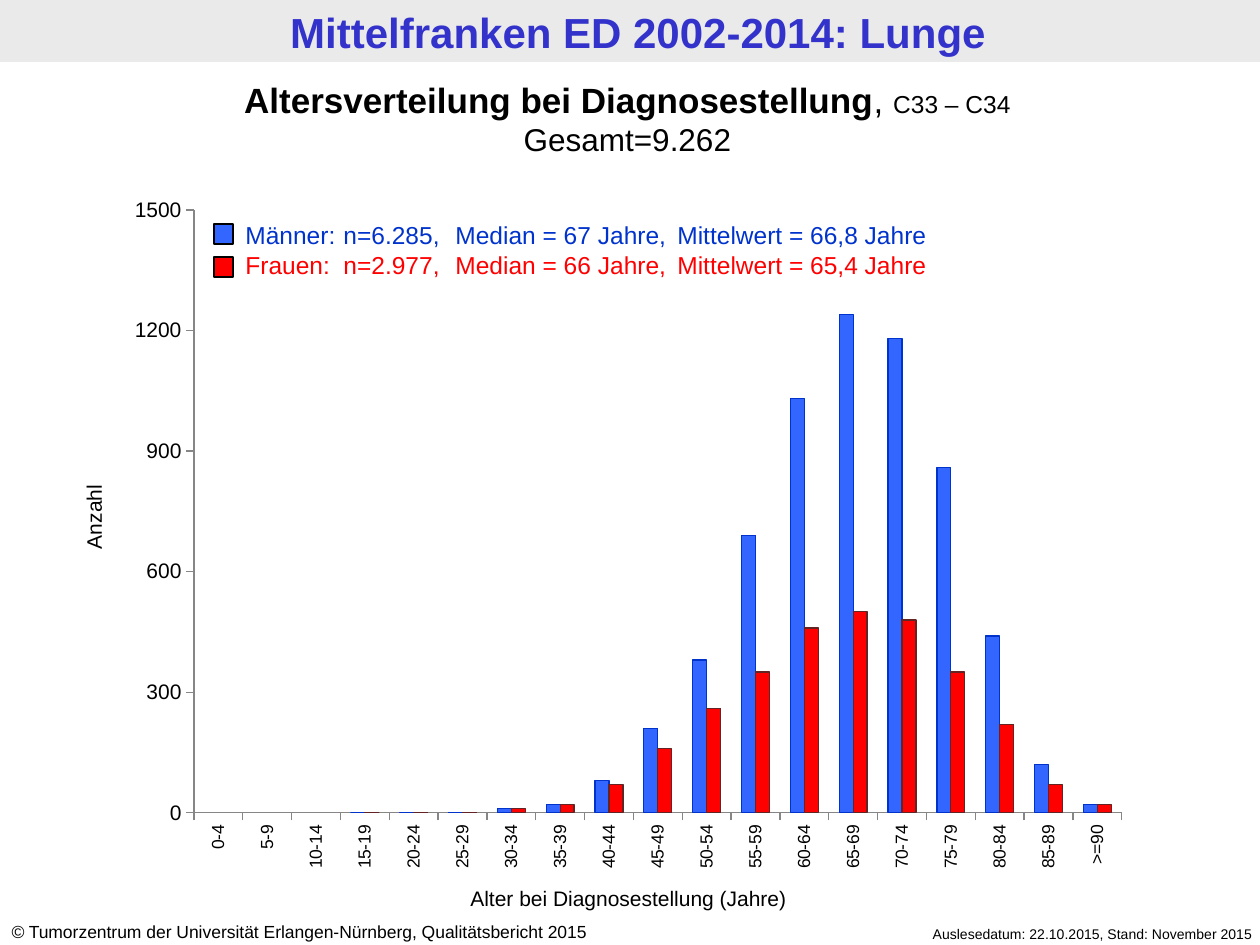
import pptx
import pptx.chart.data
import pptx.dml.color
import pptx.enum.chart
import pptx.enum.shapes
import pptx.enum.text
import pptx.oxml
import pptx.oxml.ns
import pptx.util

PX = 914400 // 126
FONT = "Arial"
BLACK, BLUE, DARK_BLUE, RED = "000000", "3366FF", "0033CC", "FF0000"
ALIGN = pptx.enum.text.PP_ALIGN
ANCHOR = pptx.enum.text.MSO_ANCHOR

TITLE = "Mittelfranken ED 2002-2014: Lunge"
HEADING = [("Altersverteilung bei Diagnosestellung", 20, True), (", ", 20, False),
           ("C33 – C34", 14, False)]
TOTAL = "Gesamt=9.262"
COPYRIGHT = [("©", True),
             (" Tumorzentrum der Universität Erlangen-Nürnberg, Qualitätsbericht 2015", False)]
STATUS = "Auslesedatum: 22.10.2015, Stand: November 2015"
AGE_LABEL, COUNT_LABEL = "Alter bei Diagnosestellung (Jahre)", "Anzahl"
LEGEND = [
    ("Männer: \tn=6.285, \tMedian = 67 Jahre, \tMittelwert = 66,8 Jahre", DARK_BLUE, BLUE),
    ("Frauen: \tn=2.977, \tMedian = 66 Jahre,\tMittelwert = 65,4 Jahre", RED, RED),
]
LEGEND_TABS = [98, 111, 210, 432]
AGES = [f"{age}-{age + 4}" for age in range(0, 90, 5)] + [">=90"]
COUNTS = [
    ("Männer", BLUE, DARK_BLUE,
     [None, None, None, 0, 0, 0, 10, 20, 80, 210, 380, 690, 1030, 1240, 1180, 860, 440, 120, 20]),
    ("Frauen", RED, "632523",
     [None, None, None, 0, 0, 0, 10, 20, 70, 160, 260, 350, 460, 500, 480, 350, 220, 70, 20]),
]
CHART_BOX = (115, 185, 1028, 699)
PLOT_BOX = (194, 210, 928, 603)


def emu(*lengths):
    return [pptx.util.Emu(length * PX) for length in lengths]


def rgb(color):
    return pptx.dml.color.RGBColor.from_string(color)


def set_font(font, size, color=BLACK, bold=False, italic=False):
    font.name, font.size = FONT, pptx.util.Pt(size)
    font.bold, font.italic = bold, italic
    font.color.rgb = rgb(color)


def add_box(slide, box, anchor=ANCHOR.TOP):
    label = slide.shapes.add_textbox(*emu(*box))
    frame = label.text_frame
    frame.word_wrap = True
    frame.vertical_anchor = anchor
    return label


def add_label(slide, box, text, size, align, anchor=ANCHOR.TOP):
    label = add_box(slide, box, anchor)
    paragraph = label.text_frame.paragraphs[0]
    paragraph.text, paragraph.alignment = text, align
    set_font(paragraph.font, size)
    return label


def add_rectangle(slide, box, fill, line=None):
    rectangle = slide.shapes.add_shape(pptx.enum.shapes.MSO_SHAPE.RECTANGLE, *emu(*box))
    rectangle.shadow.inherit = False
    rectangle.fill.solid()
    rectangle.fill.fore_color.rgb = rgb(fill)
    if line:
        rectangle.line.color.rgb = rgb(line)
        rectangle.line.width = pptx.util.Pt(0.75)
    else:
        rectangle.line.fill.background()
    return rectangle


def add_title(slide):
    band = add_rectangle(slide, (0, 0, 1260, 62), "EAEAEA")
    title = slide.shapes.title
    title._element.addprevious(band._element)
    title.left, title.top, title.width, title.height = emu(8, 1, 1260, 62)
    title.text = TITLE
    title.text_frame.vertical_anchor = ANCHOR.BOTTOM
    paragraph = title.text_frame.paragraphs[0]
    paragraph.alignment = ALIGN.CENTER
    set_font(paragraph.font, 24, "3333CC", bold=True)


def add_heading(slide):
    frame = add_box(slide, (-5, 72, 1265, 93)).text_frame
    heading, total = frame.paragraphs[0], frame.add_paragraph()
    for text, size, bold in HEADING:
        run = heading.add_run()
        run.text = text
        set_font(run.font, size, bold=bold)
    total.text = TOTAL
    set_font(total.font, 18)
    heading.alignment = total.alignment = ALIGN.CENTER


def add_tabs(paragraph, positions):
    properties = paragraph._p.get_or_add_pPr()
    tabs = pptx.oxml.parse_xml(f"<a:tabLst {pptx.oxml.ns.nsdecls('a')}/>")
    for position in positions:
        tab = tabs.makeelement(pptx.oxml.ns.qn("a:tab"), {"pos": str(position * PX), "algn": "l"})
        tabs.append(tab)
    properties.append(tabs)


def add_legend(slide):
    frame = add_box(slide, (233, 214, 863, 72)).text_frame
    for row, (text, color, fill) in enumerate(LEGEND):
        paragraph = frame.add_paragraph() if row else frame.paragraphs[0]
        paragraph.text = text
        add_tabs(paragraph, LEGEND_TABS)
        set_font(paragraph.font, 14, color)
        add_rectangle(slide, (214, 224 + 33 * row, 19, 20), fill, BLACK)


def fix_plot_area(chart):
    """Pin the inside of the axes to PLOT_BOX and give it a white fill."""
    left, top, width, height = CHART_BOX
    x, y, w, h = PLOT_BOX
    parts = {"x": (x - left) / width, "y": (y - top) / height, "w": w / width, "h": h / height}
    modes = "".join(f'<c:{part}Mode val="edge"/>' for part in "xy")
    values = "".join(f'<c:{part} val="{value:.4f}"/>' for part, value in parts.items())
    layout = pptx.oxml.parse_xml(
        f'<c:layout {pptx.oxml.ns.nsdecls("c")}><c:manualLayout>'
        f'<c:layoutTarget val="inner"/>{modes}{values}</c:manualLayout></c:layout>')
    plot_area = chart._chartSpace.chart.plotArea
    for old in plot_area.findall(pptx.oxml.ns.qn("c:layout")):
        plot_area.remove(old)
    plot_area.insert(0, layout)
    plot_area.append(pptx.oxml.parse_xml(
        f'<c:spPr {pptx.oxml.ns.nsdecls("c", "a")}><a:solidFill>'
        '<a:srgbClr val="FFFFFF"/></a:solidFill></c:spPr>'))


def add_age_chart(slide):
    data = pptx.chart.data.CategoryChartData()
    data.categories = AGES
    for name, _, _, counts in COUNTS:
        data.add_series(name, counts)
    chart = slide.shapes.add_chart(
        pptx.enum.chart.XL_CHART_TYPE.COLUMN_CLUSTERED, *emu(*CHART_BOX), data).chart
    chart.has_legend = chart.has_title = False
    set_font(chart.font, 12)
    plot = chart.plots[0]
    plot.gap_width, plot.overlap, plot.vary_by_categories = 150, 0, False
    for series, (_, fill, line, _) in zip(plot.series, COUNTS):
        series.format.fill.solid()
        series.format.fill.fore_color.rgb = rgb(fill)
        series.format.line.color.rgb = rgb(line)
        series.format.line.width = pptx.util.Pt(0.75)
    for axis, size in ((chart.category_axis, 10), (chart.value_axis, 12)):
        axis.has_major_gridlines = False
        axis.major_tick_mark = pptx.enum.chart.XL_TICK_MARK.OUTSIDE
        axis.format.line.color.rgb = rgb("868686")
        axis.format.line.width = pptx.util.Pt(0.75)
        set_font(axis.tick_labels.font, size)
    counts_axis = chart.value_axis
    counts_axis.minimum_scale, counts_axis.maximum_scale, counts_axis.major_unit = 0, 1500, 300
    age_text = chart.category_axis._element.find(pptx.oxml.ns.qn("c:txPr"))
    age_text.find(pptx.oxml.ns.qn("a:bodyPr")).set("rot", "-5400000")
    fix_plot_area(chart)


def add_copyright(slide):
    paragraph = add_box(slide, (-1, 915, 660, 34)).text_frame.paragraphs[0]
    for text, italic in COPYRIGHT:
        run = paragraph.add_run()
        run.text = text
        set_font(run.font, 10, italic=italic)


def main():
    presentation = pptx.Presentation()
    presentation.slide_width, presentation.slide_height = pptx.util.Inches(10), pptx.util.Inches(7.5)
    slide = presentation.slides.add_slide(presentation.slide_layouts.get_by_name("Title Only"))
    add_title(slide)
    add_label(slide, (838, 919, 427, 30), STATUS, 8, ALIGN.RIGHT)
    add_copyright(slide)
    add_age_chart(slide)
    add_heading(slide)
    add_legend(slide)
    add_label(slide, (435, 879, 387, 38), AGE_LABEL, 12, ALIGN.CENTER, ANCHOR.MIDDLE)
    count_label = add_label(slide, (-71, 498, 329, 38), COUNT_LABEL, 12, ALIGN.CENTER, ANCHOR.MIDDLE)
    count_label.rotation = 270
    presentation.save("out.pptx")


if __name__ == "__main__":
    main()
